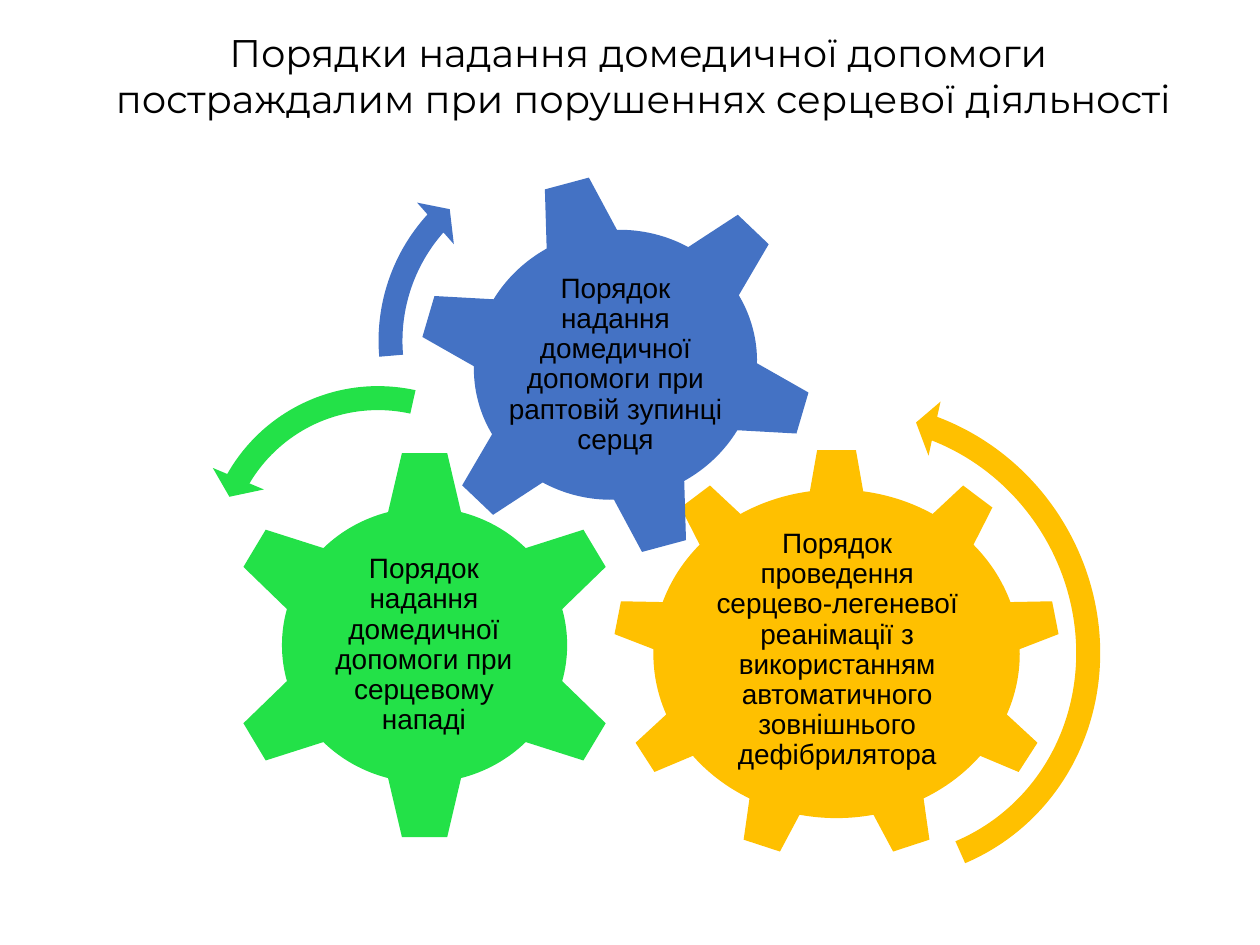
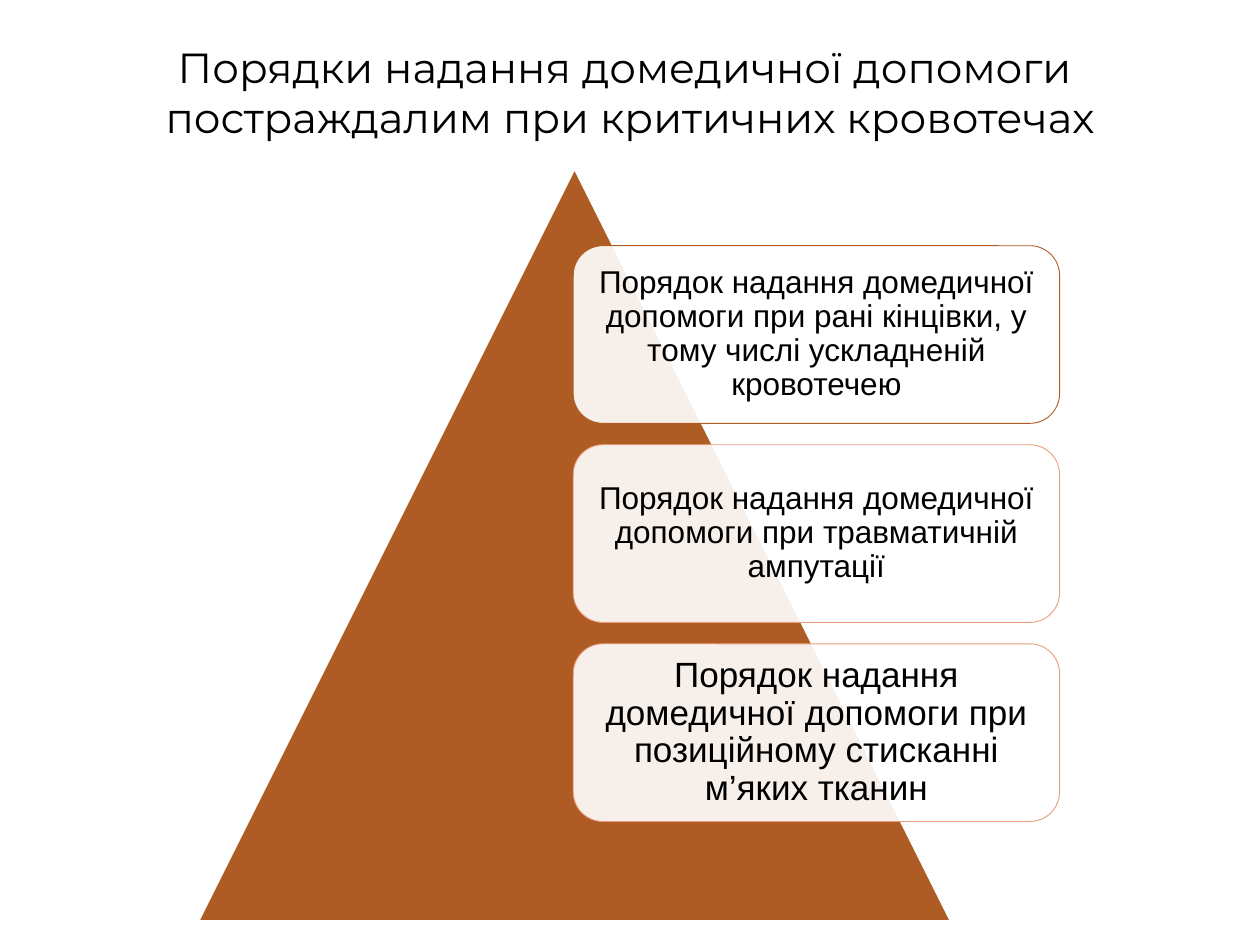
"""Build two slides on first-aid procedures: cardiac emergencies and critical bleeding."""
from lxml import etree
from pptx import Presentation
from pptx.dml.color import RGBColor
from pptx.enum.shapes import MSO_SHAPE
from pptx.enum.text import MSO_ANCHOR, PP_ALIGN
from pptx.oxml.ns import qn
from pptx.util import Inches, Pt

GEAR_SIX, GEAR_NINE = MSO_SHAPE.GEAR_6, MSO_SHAPE.GEAR_9
ARROW, LEFT_ARROW = MSO_SHAPE.CIRCULAR_ARROW, MSO_SHAPE.LEFT_CIRCULAR_ARROW
TRIANGLE, ROUNDED = MSO_SHAPE.ISOSCELES_TRIANGLE, MSO_SHAPE.ROUNDED_RECTANGLE
CENTER, MIDDLE, TOP = PP_ALIGN.CENTER, MSO_ANCHOR.MIDDLE, MSO_ANCHOR.TOP

THEME = {
    "title_font": "Montserrat", "body_font": "Arial",
    "ink": "000000", "card": "FFFFFF", "card_opacity": 90,
    "amber": "FFC000", "green": "23E148", "blue": "4472C4",
    "rust": "AF5C24", "peach": "E99E7D",
    "gear_size": 16, "line_spacing": 0.9, "border": 0.5,
}

CARDIAC_TITLE = {
    "lines": ["Порядки надання домедичної допомоги ",
              "постраждалим при порушеннях серцевої діяльності"],
    "box": (0.46, 0.18, 9.29, 0.84), "size": 22,
}
GEARS = [
    {"text": "Порядок проведення серцево-легеневої реанімації з використанням "
             "автоматичного зовнішнього дефібрилятора",
     "kind": GEAR_NINE, "color": "amber", "turn": 0,
     "box": (4.86, 3.56, 3.56, 3.26), "label": (5.56, 4.32, 2.17, 1.68)},
    {"text": "Порядок надання домедичної допомоги при серцевому нападі",
     "kind": GEAR_SIX, "color": "green", "turn": 0,
     "box": (1.77, 3.56, 3.2, 3.12), "label": (2.56, 4.35, 1.61, 1.54)},
    {"text": "Порядок надання домедичної допомоги при раптовій зупинці серця",
     "kind": GEAR_SIX, "color": "blue", "turn": 345,
     "box": (3.3, 1.37, 3.17, 3.05), "label": (4, 2.03, 1.77, 1.73)},
]
ARROW_BAND, ARROW_HEAD = 0.19, 0.22
ARROWS = [
    {"kind": ARROW, "color": "amber", "turn": 149.8, "mirrored": True,
     "box": (4.94, 3.04, 3.89, 4.1), "angles": (2.99, 25.38, 158.14)},
    {"kind": LEFT_ARROW, "color": "green", "turn": 35.2, "mirrored": False,
     "box": (1.5, 2.94, 3, 3), "angles": (4.3, 104.89, 148.38)},
    {"kind": ARROW, "color": "blue", "turn": 0, "mirrored": False,
     "box": (2.88, 1.09, 3.23, 3.23), "angles": (3.94, 133.14, 105.08)},
]

BLEEDING_TITLE = {
    "lines": ["Порядки надання домедичної допомоги ",
              "постраждалим при критичних кровотечах"],
    "box": (0.89, 0.28, 8.22, 0.91), "size": 24,
}
PYRAMID = (1.59, 1.36, 5.94, 5.94)
CARD_LEFT, CARD_TOP, CARD_WIDTH, CARD_HEIGHT = 4.55, 1.95, 3.86, 1.41
CARD_STEP = 1.58
CARDS = [
    ("Порядок надання домедичної допомоги при рані кінцівки, у тому числі "
     "ускладненій кровотечею", "rust", 18, 0.07),
    ("Порядок надання домедичної допомоги при травматичній ампутації",
     "peach", 18, 0.07),
    ("Порядок надання домедичної допомоги при позиційному стисканні м’яких тканин",
     "peach", 20, 0.08),
]


def color(name):
    return RGBColor.from_string(THEME[name])


def inches(box):
    return [Inches(length) for length in box]


def apply(target, formats):
    for attribute, value in formats.items():
        setattr(target, attribute, value)


def write(frame, lines, font, size, insets, anchor, spacing=1.0, wrap=True):
    across, down = (Inches(inset) for inset in insets)
    apply(frame, {"word_wrap": wrap, "vertical_anchor": anchor,
                  "margin_left": across, "margin_right": across,
                  "margin_top": down, "margin_bottom": down})
    for index, line in enumerate(lines):
        paragraph = frame.add_paragraph() if index else frame.paragraphs[0]
        apply(paragraph, {"alignment": CENTER, "line_spacing": spacing})
        run = paragraph.add_run()
        run.text = line
        apply(run.font, {"name": THEME[font], "size": Pt(size)})
        run.font.color.rgb = color("ink")


def add_title(slide, title):
    heading = slide.shapes.add_textbox(*inches(title["box"]))
    write(heading.text_frame, title["lines"], "title_font", title["size"],
          (0.1, 0.05), TOP, wrap=False)


def add_figure(slide, kind, box, fill, turn=0):
    figure = slide.shapes.add_shape(kind, *inches(box))
    figure.shadow.inherit = False
    figure.fill.solid()
    figure.fill.fore_color.rgb = color(fill)
    figure.line.fill.background()
    figure.rotation = turn
    return figure


def add_gear(slide, gear):
    add_figure(slide, gear["kind"], gear["box"], gear["color"], gear["turn"])
    label = slide.shapes.add_textbox(*inches(gear["label"]))
    write(label.text_frame, [gear["text"]], "body_font", THEME["gear_size"],
          (0.02, 0.02), MIDDLE, THEME["line_spacing"])


def add_arrow(slide, arrow):
    curve = add_figure(slide, arrow["kind"], arrow["box"], arrow["color"], arrow["turn"])
    extent = min(arrow["box"][2:])
    settings = (ARROW_BAND / extent, *arrow["angles"], ARROW_HEAD / extent)
    for index, value in enumerate(settings):
        curve.adjustments[index] = value
    if arrow["mirrored"]:
        curve.element.spPr.find(qn("a:xfrm")).set("flipH", "1")


def add_card(slide, row, text, border, size, inset):
    box = (CARD_LEFT, CARD_TOP + row * CARD_STEP, CARD_WIDTH, CARD_HEIGHT)
    card = add_figure(slide, ROUNDED, box, "card")
    tint = card.element.spPr.find(qn("a:solidFill"))[0]
    etree.SubElement(tint, qn("a:alpha")).set("val", str(THEME["card_opacity"] * 1000))
    card.line.color.rgb = color(border)
    card.line.width = Pt(THEME["border"])
    write(card.text_frame, [text], "body_font", size, (inset, inset), MIDDLE,
          THEME["line_spacing"])


def main():
    deck = Presentation()
    apply(deck, {"slide_width": Inches(10), "slide_height": Inches(7.5)})
    blank = deck.slide_layouts[6]

    cardiac = deck.slides.add_slide(blank)
    add_title(cardiac, CARDIAC_TITLE)
    for gear in GEARS:
        add_gear(cardiac, gear)
    for arrow in ARROWS:
        add_arrow(cardiac, arrow)

    bleeding = deck.slides.add_slide(blank)
    add_title(bleeding, BLEEDING_TITLE)
    add_figure(bleeding, TRIANGLE, PYRAMID, "rust")
    for row, card in enumerate(CARDS):
        add_card(bleeding, row, *card)

    deck.save("out.pptx")


if __name__ == "__main__":
    main()
